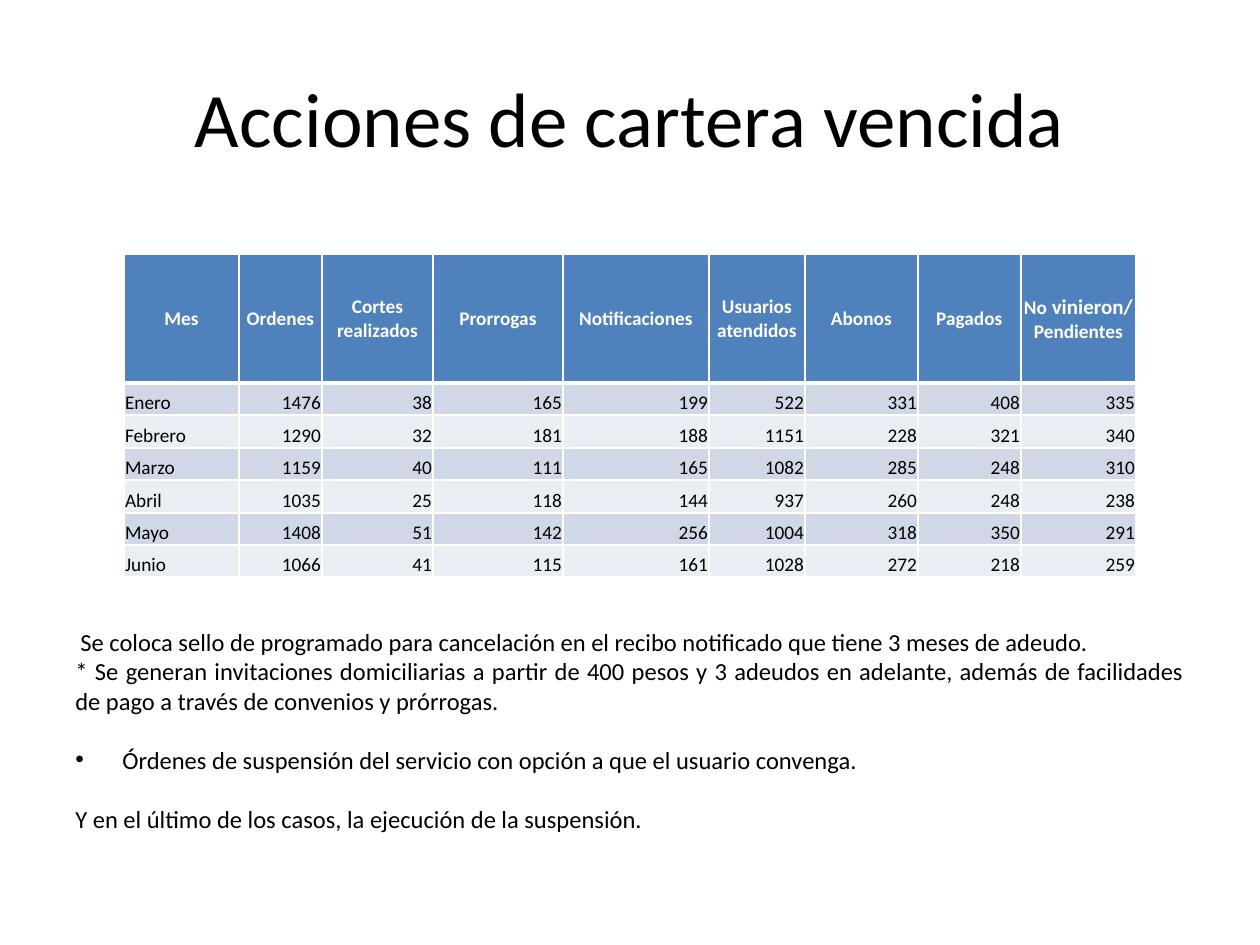
from lxml import etree
from pptx import Presentation
from pptx.dml.color import RGBColor
from pptx.enum.text import MSO_ANCHOR, PP_ALIGN
from pptx.oxml.ns import qn
from pptx.util import Emu, Pt

LEFT, CENTER, RIGHT, JUSTIFY = PP_ALIGN.LEFT, PP_ALIGN.CENTER, PP_ALIGN.RIGHT, PP_ALIGN.JUSTIFY
MIDDLE, BOTTOM = MSO_ANCHOR.MIDDLE, MSO_ANCHOR.BOTTOM
PX = 914400 / 126
BLACK, WHITE, BLUE = "000000", "FFFFFF", "4F81BD"
BANDS = ["E9EDF4", "D0D8E8"]


def px(length):
    return Emu(round(length * PX))


def add_span(para, text, size, color=BLACK, **formats):
    span = para.add_run()
    span.text = text
    span.font.color.rgb = RGBColor.from_string(color)
    for name, value in {"name": "Calibri", "size": Pt(size), **formats}.items():
        setattr(span.font, name, value)


deck = Presentation()
deck.slide_width, deck.slide_height = px(1260), px(945)
page = deck.slides.add_slide(deck.slide_layouts[6])

# Title
title = page.shapes.add_textbox(px(63), px(38), px(1134), px(157)).text_frame
title.word_wrap = True
title.vertical_anchor = MIDDLE
title.paragraphs[0].alignment = CENTER
add_span(title.paragraphs[0], "Acciones de cartera vencida", 44)

# Notes under the table: text, space before, left margin, first-line indent, bullet
notes = [
    ("Se coloca sello de programado para cancelación en el recibo notificado que tiene 3 meses de adeudo.",
     0, 0, 5, None),
    ("* Se generan invitaciones domiciliarias a partir de 400 pesos y 3 adeudos en adelante, "
     "además de facilidades de pago a través de convenios y prórrogas.", 0, 0, 0, None),
    ("Órdenes de suspensión del servicio con opción a que el usuario convenga.", 16.8, 47, -47, "•"),
    ("Y en el último de los casos, la ejecución de la suspensión.", 16.8, 0, 0, None),
]
body = page.shapes.add_textbox(px(63), px(220), px(1134), px(624)).text_frame
body.word_wrap = True
body.vertical_anchor = BOTTOM
body.margin_bottom = px(11)
for index, (text, gap, margin, indent, bullet) in enumerate(notes):
    para = body.add_paragraph() if index else body.paragraphs[0]
    properties = para._p.get_or_add_pPr()
    properties.set("marL", str(px(margin)))
    properties.set("indent", str(px(indent)))
    if bullet:
        etree.SubElement(properties, qn("a:buFont"), typeface="Arial")
        etree.SubElement(properties, qn("a:buChar"), char=bullet)
    para.alignment = JUSTIFY
    para.line_spacing = Pt(16.8)
    if gap:
        para.space_before = Pt(gap)
    add_span(para, text, 14)

# Table contents
headers = ["Mes", "Ordenes", "Cortes realizados", "Prorrogas", "Notificaciones",
           "Usuarios atendidos", "Abonos", "Pagados", "No vinieron/\nPendientes"]
months = [
    ("Enero", 1476, 38, 165, 199, 522, 331, 408, 335),
    ("Febrero", 1290, 32, 181, 188, 1151, 228, 321, 340),
    ("Marzo", 1159, 40, 111, 165, 1082, 285, 248, 310),
    ("Abril", 1035, 25, 118, 144, 937, 260, 248, 238),
    ("Mayo", 1408, 51, 142, 256, 1004, 318, 350, 291),
    ("Junio", 1066, 41, 115, 161, 1028, 272, 218, 259),
]
rows = [headers, *months]
widths = [115, 83, 111, 130, 146, 96, 113, 103, 115]
heights = [129, 32, 33, 32, 33, 32, 32]

# Table grid
table = page.shapes.add_table(len(rows), len(widths), px(124), px(254),
                              px(sum(widths)), px(sum(heights))).table
for column, width in zip(table.columns, widths):
    column.width = px(width)
for line, height in zip(table.rows, heights):
    line.height = px(height)

# Table cells
for row, values in enumerate(rows):
    for col, value in enumerate(values):
        cell = table.cell(row, col)
        is_header = row == 0
        formats = {"margin_left": px(1), "margin_right": px(1), "margin_top": px(1),
                   "margin_bottom": 0, "vertical_anchor": MIDDLE if is_header else BOTTOM}
        for name, setting in formats.items():
            setattr(cell, name, setting)

        # White borders, thicker between the header and the first month
        thick = {(0, "B"), (1, "T")}
        for side in "LRTB":
            weight = Pt(3 if (row, side) in thick else 1)
            border = etree.SubElement(cell._tc.get_or_add_tcPr(), qn(f"a:ln{side}"), w=str(weight))
            solid = etree.SubElement(border, qn("a:solidFill"))
            etree.SubElement(solid, qn("a:srgbClr"), val=WHITE)
        cell.fill.solid()
        cell.fill.fore_color.rgb = RGBColor.from_string(BLUE if is_header else BANDS[row % 2])

        for index, text in enumerate(str(value).split("\n")):
            para = cell.text_frame.add_paragraph() if index else cell.text_frame.paragraphs[0]
            para.alignment = CENTER if is_header else RIGHT if col else LEFT
            color = WHITE if is_header else BLACK
            # The last header sets its second word one point larger
            first, mark, rest = text.partition(" vinieron")
            add_span(para, first, 11, color, bold=is_header)
            if mark:
                add_span(para, mark + rest, 12, color, bold=is_header)

deck.save("out.pptx")
